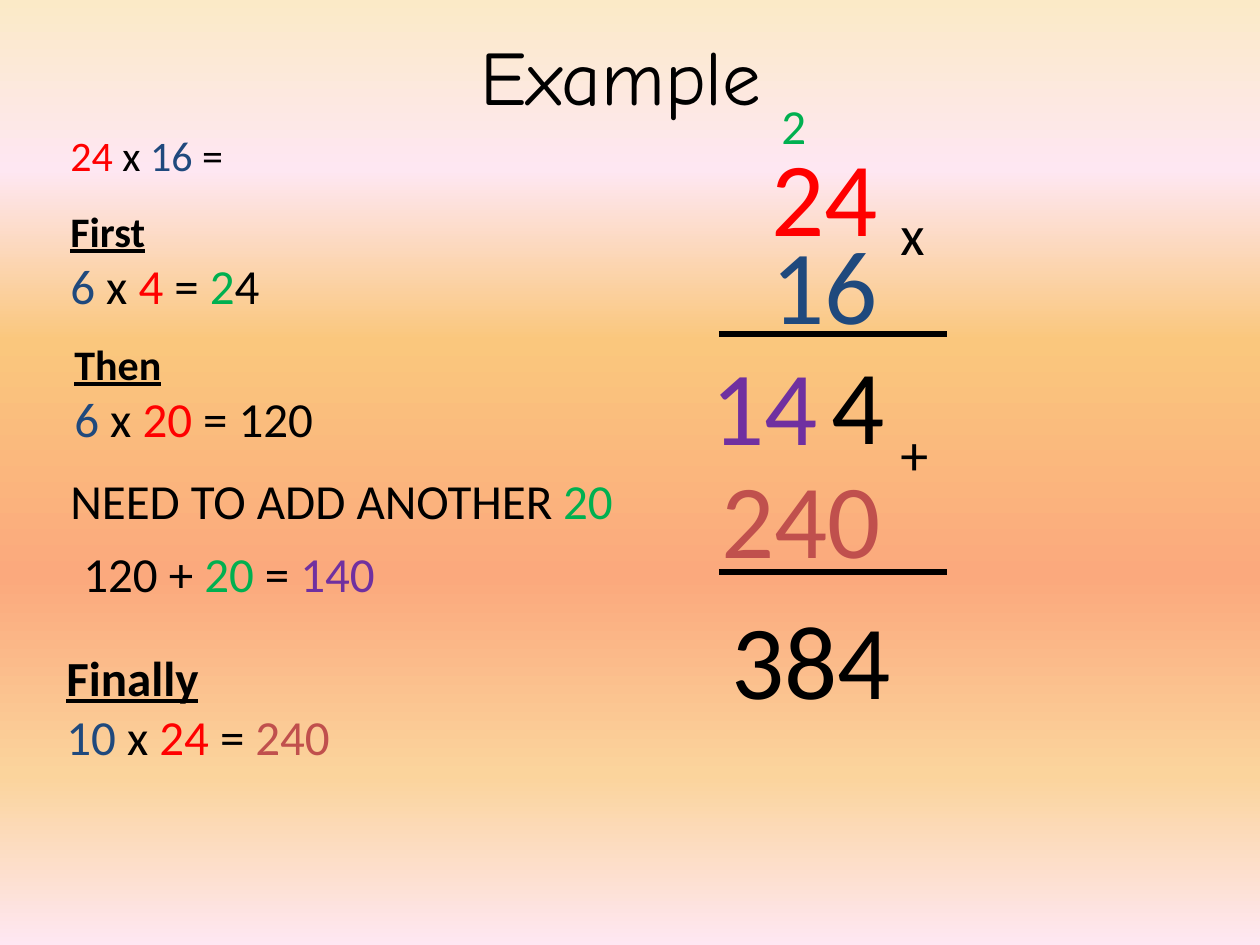
"""Build a worked example slide of long multiplication."""
from dataclasses import dataclass

from lxml.etree import SubElement
from pptx import Presentation
from pptx.dml.color import RGBColor
from pptx.enum.text import MSO_ANCHOR, MSO_AUTO_SIZE, PP_ALIGN
from pptx.enum.shapes import MSO_CONNECTOR
from pptx.oxml.ns import qn
from pptx.slide import Slide
from pptx.util import Emu, Pt

SCALE = 914400 / 126
BLACK, RED, BLUE = "000000", "FF0000", "1F497D"
GREEN, PURPLE, ROSE = "00B050", "7030A0", "C0504D"
STOPS = [(0, "FBEAC7"), (18, "FEE7F2"), (36, "FAC77D"),
         (61, "FBA97D"), (82, "FBD49C"), (100, "FEE7F2")]


@dataclass
class Line:
    size: int
    runs: list[tuple[str, str]]
    head: bool = False


@dataclass
class Box:
    left: int
    top: int
    width: int
    height: int
    lines: list[Line]


def px(num: int) -> Emu:
    """Turn pixels into EMU."""
    return Emu(round(num * SCALE))


def color(code: str) -> RGBColor:
    """Turn a hex string into a colour."""
    return RGBColor.from_string(code)


def digit(left: int, top: int, width: int, text: str, code: str) -> Box:
    """Describe a large number of the column sum."""
    return Box(left, top, width, 140, [Line(60, [(text, code)])])


def sign(left: int, top: int, width: int, text: str) -> Box:
    """Describe an operator of the column sum."""
    return Box(left, top, width, 81, [Line(32, [(text, BLACK)])])


def title(text: str) -> Line:
    """Describe the underlined head of a step."""
    return Line(28 if text == "Finally" else 24, [(text, BLACK)], True)


STEPS = [
    Box(58, 123, 198, 63,
        [Line(24, [("24", RED), (" x ", BLACK), ("16", BLUE), (" =", BLACK)])]),
    Box(58, 199, 297, 123,
        [title("First"),
         Line(28, [("6", BLUE), (" x ", BLACK), ("4", RED), (" = ", BLACK),
                   ("2", GREEN), ("4", BLACK)])]),
    Box(62, 332, 297, 123,
        [title("Then"),
         Line(28, [("6", BLUE), (" x ", BLACK), ("20", RED), (" = 120", BLACK)])]),
    Box(58, 464, 582, 72,
        [Line(28, [("NEED TO ADD ANOTHER ", BLACK), ("20", GREEN)])]),
    Box(71, 537, 362, 72,
        [Line(28, [("120 + ", BLACK), ("20", GREEN), (" = ", BLACK),
                   ("140", PURPLE)])]),
    Box(54, 641, 484, 131,
        [title("Finally"),
         Line(28, [("10", BLUE), (" x ", BLACK), ("24 ", RED), ("= ", BLACK),
                   ("240", ROSE)])]),
]
SUM = [
    Box(769, 89, 110, 72, [Line(28, [("2", GREEN)])]),
    digit(759, 125, 159, "24", RED),
    digit(759, 213, 159, "16", BLUE),
    digit(699, 334, 139, "14", PURPLE),
    digit(819, 333, 100, "4", BLACK),
    digit(709, 447, 476, "240", ROSE),
    digit(719, 588, 277, "384", BLACK),
    sign(888, 193, 59, "x"),
    sign(888, 413, 149, "+"),
]


def paint(slide: Slide) -> None:
    """Fill the background with the striped gradient."""
    fill = slide.background.fill
    fill.gradient()
    fill.gradient_angle = 270
    stops = next(slide.element.iter(qn("a:gsLst")))
    for old in list(stops):
        stops.remove(old)
    for place, code in STOPS:
        stop = SubElement(stops, qn("a:gs"), pos=str(place * 1000))
        SubElement(stop, qn("a:srgbClr"), val=code)


def name(slide: Slide, text: str) -> None:
    """Place the slide title."""
    shape = slide.shapes.title
    shape.left, shape.top = px(54), px(-4)
    shape.width, shape.height = px(1134), px(158)
    frame = shape.text_frame
    frame.text = text
    frame.vertical_anchor = MSO_ANCHOR.MIDDLE
    para = frame.paragraphs[0]
    para.alignment = PP_ALIGN.CENTER
    para.font.name, para.font.size = "Comic Neue", Pt(44)
    para.font.color.rgb = color(BLACK)


def write(slide: Slide, box: Box) -> None:
    """Draw a text box with its coloured runs."""
    shape = slide.shapes.add_textbox(
        px(box.left), px(box.top), px(box.width), px(box.height))
    frame = shape.text_frame
    frame.word_wrap = True
    frame.auto_size = MSO_AUTO_SIZE.SHAPE_TO_FIT_TEXT
    for i, line in enumerate(box.lines):
        para = frame.add_paragraph() if i else frame.paragraphs[0]
        font = para.font
        font.name, font.size = "Calibri", Pt(line.size)
        font.bold = font.underline = line.head
        for text, code in line.runs:
            run = para.add_run()
            run.text = text
            run.font.color.rgb = color(code)


def rule(slide: Slide, top: int) -> None:
    """Draw a rule under the column sum."""
    line = slide.shapes.add_connector(
        MSO_CONNECTOR.STRAIGHT, px(719), px(top), px(947), px(top))
    line.line.color.rgb = color(BLACK)
    line.line.width = Pt(3)
    SubElement(line._element.spPr, qn("a:effectLst"))


def main() -> None:
    """Build and save the slide."""
    deck = Presentation()
    deck.slide_width, deck.slide_height = px(1260), px(945)
    slide = deck.slides.add_slide(deck.slide_layouts[5])
    paint(slide)
    name(slide, "Example")
    for box in STEPS + SUM:
        write(slide, box)
    for top in (334, 572):
        rule(slide, top)
    deck.save("out.pptx")


if __name__ == "__main__":
    main()
